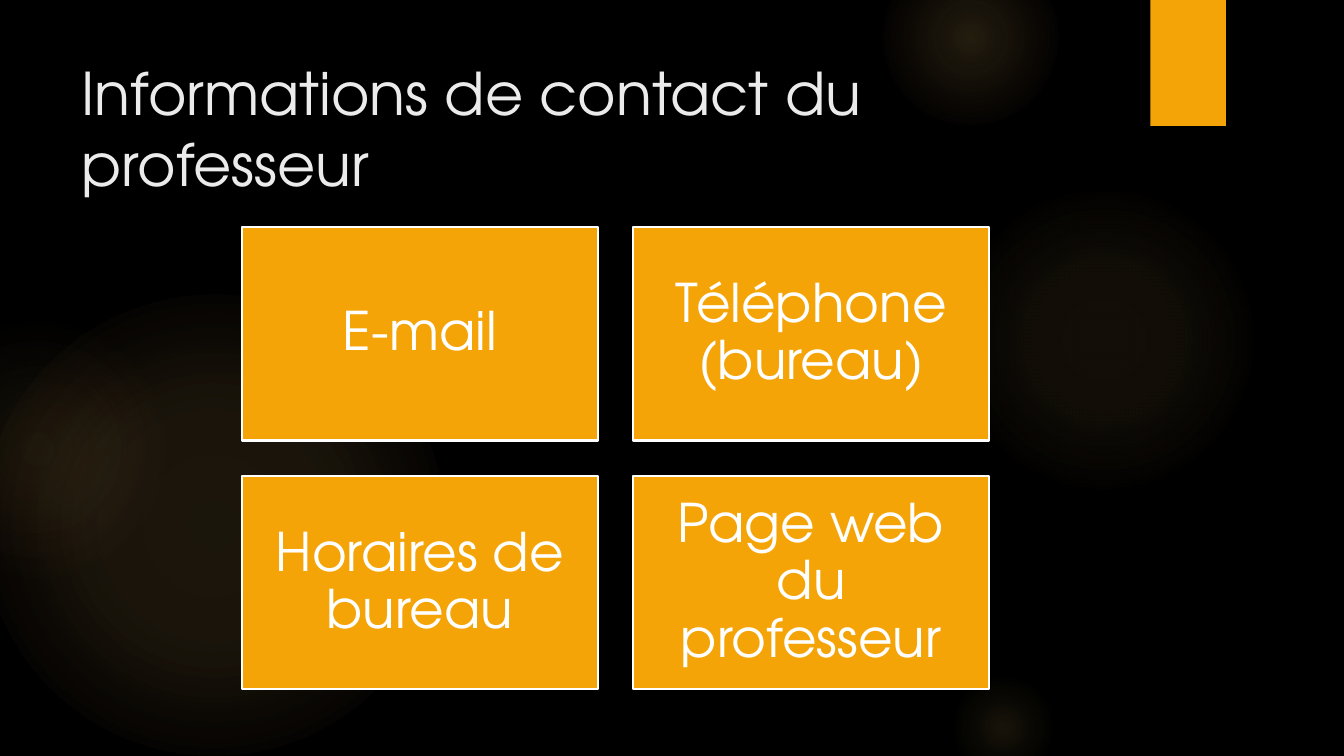
import pptx
import pptx.util
import pptx.dml.color
import pptx.enum.shapes
import pptx.enum.text
import pptx.oxml
import pptx.oxml.ns

SHAPE = pptx.enum.shapes.MSO_SHAPE
ANCHOR = pptx.enum.text.MSO_ANCHOR
ALIGN = pptx.enum.text.PP_ALIGN
Inches = pptx.util.Inches
Pt = pptx.util.Pt

FONT = "TeX Gyre Adventor"
ORANGE, AMBER, PEACH = "F5A408", "FAC96A", "F59B74"
WHITE, PALE, BLACK = "FFFFFF", "EBEBEB", "000000"

# left, top, diameter, gradient stops as (position %, colour, opacity %)
GLOWS = [
    (-0.17, 2.92, 4.58, [(0, AMBER, 11), (36, AMBER, 10), (75, AMBER, 0)]),
    (-0.92, 3.17, 2.58, [(0, AMBER, 8), (36, AMBER, 5), (71, PEACH, 0)]),
    (9.41, 1.83, 3.08, [(0, AMBER, 7), (36, AMBER, 6), (69, AMBER, 0)]),
    (8.75, -0.5, 1.75, [(0, AMBER, 14), (36, AMBER, 7), (73, AMBER, 0)]),
    (9.41, 6.67, 1.08, [(0, AMBER, 10), (31, AMBER, 5), (66, AMBER, 0)]),
]

CARDS = ["E-mail", "Téléphone (bureau)", "Horaires de bureau", "Page web du professeur"]
COLUMNS = 2
GRID_LEFT, GRID_TOP = 2.4, 2.25
CARD_W, CARD_H, GAP = 3.53, 2.12, 0.35


def rgb(hex_colour):
    return pptx.dml.color.RGBColor.from_string(hex_colour)


def add_plain(s, kind, left, top, width, height, fill=ORANGE):
    """Add a filled shape without outline or shadow; lengths in inches."""
    sp = s.shapes.add_shape(kind, *map(Inches, (left, top, width, height)))
    sp.shadow.inherit = False
    sp.fill.solid()
    sp.fill.fore_color.rgb = rgb(fill)
    sp.line.fill.background()
    return sp


def add_glow(s, left, top, size, stops):
    """Add a circle that fades out from its centre."""
    sp = add_plain(s, SHAPE.OVAL, left, top, size, size)
    stop_xml = "".join(
        f'<a:gs pos="{pos * 1000}"><a:srgbClr val="{colour}">'
        f'<a:alpha val="{opacity * 1000}"/></a:srgbClr></a:gs>'
        for pos, colour, opacity in stops)
    gradient = pptx.oxml.parse_xml(
        f'<a:gradFill {pptx.oxml.ns.nsdecls("a")} rotWithShape="1">'
        f'<a:gsLst>{stop_xml}</a:gsLst><a:path path="circle">'
        '<a:fillToRect l="50000" t="50000" r="50000" b="50000"/>'
        '</a:path></a:gradFill>')
    sp_pr = sp.element.spPr
    sp_pr.replace(sp_pr.find(pptx.oxml.ns.qn("a:solidFill")), gradient)


def set_font(p, size, colour):
    p.font.name = FONT
    p.font.size = Pt(size)
    p.font.color.rgb = rgb(colour)


def add_title(s, text):
    sp = s.shapes.title
    sp.left, sp.top, sp.width, sp.height = map(Inches, (0.71, 0.5, 10.29, 1.53))
    tf = sp.text_frame
    tf.text = text
    tf.word_wrap = True
    tf.auto_size = pptx.enum.text.MSO_AUTO_SIZE.NONE
    tf.vertical_anchor = ANCHOR.MIDDLE
    p = tf.paragraphs[0]
    p.alignment = ALIGN.LEFT
    set_font(p, 42, PALE)


def add_card(s, index, text):
    row, column = divmod(index, COLUMNS)
    sp = add_plain(s, SHAPE.RECTANGLE, GRID_LEFT + column * (CARD_W + GAP),
                   GRID_TOP + row * (CARD_H + GAP), CARD_W, CARD_H)
    sp.line.color.rgb = rgb(WHITE)
    sp.line.width = Pt(1.5)
    tf = sp.text_frame
    tf.text = text
    tf.word_wrap = True
    tf.vertical_anchor = ANCHOR.MIDDLE
    tf.margin_left = tf.margin_right = tf.margin_top = tf.margin_bottom = Inches(0.16)
    p = tf.paragraphs[0]
    p.alignment = ALIGN.CENTER
    p.line_spacing = 0.9
    p.space_after = Pt(13)
    set_font(p, 38, WHITE)


def main():
    prs = pptx.Presentation()
    prs.slide_width, prs.slide_height = Inches(13.33), Inches(7.5)
    s = prs.slides.add_slide(prs.slide_layouts[5])
    s.background.fill.solid()
    s.background.fill.fore_color.rgb = rgb(BLACK)

    for glow in GLOWS:
        add_glow(s, *glow)
    add_plain(s, SHAPE.RECTANGLE, 11.41, 0, 0.75, 1.25)
    add_title(s, "Informations de contact du professeur")
    for index, text in enumerate(CARDS):
        add_card(s, index, text)
    prs.save("out.pptx")


if __name__ == "__main__":
    main()
